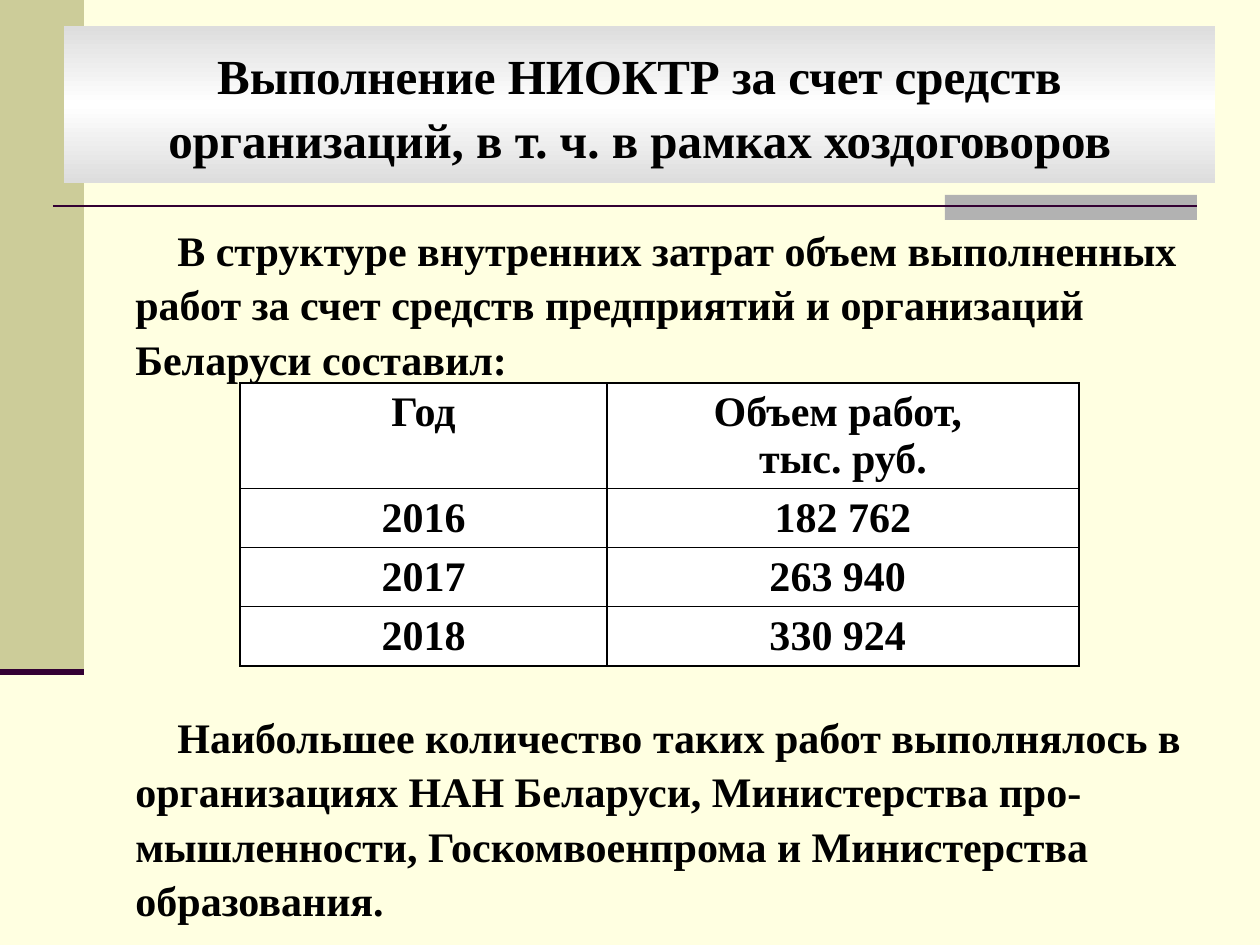
from copy import deepcopy
from typing import NamedTuple

from lxml.etree import SubElement
from pptx import Presentation
from pptx.dml.color import RGBColor as RGB
from pptx.enum.shapes import MSO_CONNECTOR as CONN, MSO_SHAPE as SHAPE
from pptx.enum.text import MSO_ANCHOR as ANCHOR, PP_ALIGN as ALIGN
from pptx.oxml.ns import qn
from pptx.util import Emu, Pt

SCALE = 914400 / 126
COLORS = {
    "page": "FFFFE1", "band": "CCCC99", "tab": "B2B2B2", "rule": "330033",
    "edge": "DDDDDD", "white": "FFFFFF", "ink": "000000",
}
FONT = {"name": "Times New Roman", "bold": True}


class Box(NamedTuple):
    x: int
    y: int
    w: int
    h: int


class Block(NamedTuple):
    box: Box
    color: str


class Rule(NamedTuple):
    x1: int
    x2: int
    y: int
    width: float


class Body(NamedTuple):
    box: Box
    text: str


BLOCKS = [Block(Box(0, 0, 84, 672), "band"), Block(Box(945, 195, 252, 25), "tab")]
RULES = [Rule(53, 1197, 206, 1.5), Rule(0, 84, 672, 3.5)]
TITLE_BOX = Box(64, 26, 1151, 157)
TITLE = "Выполнение НИОКТР за счет средств организаций, в т. ч. в рамках хоздоговоров"
BODIES = [
    Body(Box(123, 214, 1072, 179),
         "В структуре внутренних затрат объем выполненных работ за счет средств "
         "предприятий и организаций Беларуси составил:"),
    Body(Box(123, 701, 1072, 218),
         "Наибольшее количество таких работ выполнялось в организациях НАН Беларуси, "
         "Министерства про-мышленности, Госкомвоенпрома и Министерства образования."),
]
TABLE_BOX = Box(240, 383, 839, 282)
COLS = [367, 472]
ROWS = [105, 59, 59, 59]
CELLS = [
    ["Год", "Объем работ, \nтыс. руб."],
    ["2016", "182 762"],
    ["2017", "263 940 "],
    ["2018", "330 924 "],
]


def px(n: int) -> Emu:
    return Emu(round(n * SCALE))


def rgb(key: str) -> RGB:
    return RGB.from_string(COLORS[key])


def paint(fill, key: str) -> None:
    fill.solid()
    fill.fore_color.rgb = rgb(key)


def write(tf, text: str, size: int, **para) -> None:
    tf.text = text
    for p in tf.paragraphs:
        for name, value in para.items():
            setattr(p, name, value)
        for r in p.runs:
            for name, value in {**FONT, "size": Pt(size)}.items():
                setattr(r.font, name, value)
            r.font.color.rgb = rgb("ink")


def add_rect(s, box: Box):
    sp = s.shapes.add_shape(SHAPE.RECTANGLE, *map(px, box))
    sp.shadow.inherit = False
    sp.line.fill.background()
    return sp


def add_rule(s, rule: Rule) -> None:
    cx = s.shapes.add_connector(
        CONN.STRAIGHT, px(rule.x1), px(rule.y), px(rule.x2), px(rule.y))
    cx.line.color.rgb = rgb("rule")
    cx.line.width = Pt(rule.width)
    SubElement(cx._element.spPr, qn("a:effectLst"))


def add_body(s, body: Body) -> None:
    tf = s.shapes.add_textbox(*map(px, body.box)).text_frame
    tf.word_wrap = True
    write(tf, body.text, 24, alignment=ALIGN.LEFT, line_spacing=1.08)
    tf.paragraphs[0]._p.get_or_add_pPr().set("indent", str(px(42)))


def add_title(s) -> None:
    sp = add_rect(s, TITLE_BOX)
    sp.fill.gradient()
    sp.fill.gradient_angle = 90
    stops = sp._element.spPr.find(qn("a:gradFill")).find(qn("a:gsLst"))
    stops.append(deepcopy(stops[0]))
    for i, key in enumerate(["edge", "white", "edge"]):
        stop = sp.fill.gradient_stops[i]
        stop.position = i / 2
        stop.color.rgb = rgb(key)
    sp.text_frame.word_wrap = True
    sp.text_frame.vertical_anchor = ANCHOR.MIDDLE
    write(sp.text_frame, TITLE, 28, alignment=ALIGN.CENTER, line_spacing=1.08)


def add_borders(cell) -> None:
    tc_pr = cell._tc.get_or_add_tcPr()
    for i, side in enumerate(["lnL", "lnR", "lnT", "lnB"]):
        ln = tc_pr.makeelement(qn(f"a:{side}"), {"w": str(Pt(1))})
        SubElement(SubElement(ln, qn("a:solidFill")), qn("a:srgbClr"), val=COLORS["ink"])
        tc_pr.insert(i, ln)


def add_volumes(s) -> None:
    table = s.shapes.add_table(len(ROWS), len(COLS), *map(px, TABLE_BOX)).table
    for col, width in zip(table.columns, COLS):
        col.width = px(width)
    for row, height, texts in zip(table.rows, ROWS, CELLS):
        row.height = px(height)
        for cell, text in zip(row.cells, texts):
            paint(cell.fill, "white")
            add_borders(cell)
            write(cell.text_frame, text, 24, alignment=ALIGN.CENTER)


def main() -> None:
    """Build the slide on contract research volumes and save it."""
    prs = Presentation()
    prs.slide_width, prs.slide_height = px(1260), px(945)
    s = prs.slides.add_slide(prs.slide_layouts[6])
    paint(s.background.fill, "page")
    for block in BLOCKS:
        paint(add_rect(s, block.box).fill, block.color)
    for rule in RULES:
        add_rule(s, rule)
    add_title(s)
    add_volumes(s)
    for body in BODIES:
        add_body(s, body)
    prs.save("out.pptx")


if __name__ == "__main__":
    main()
